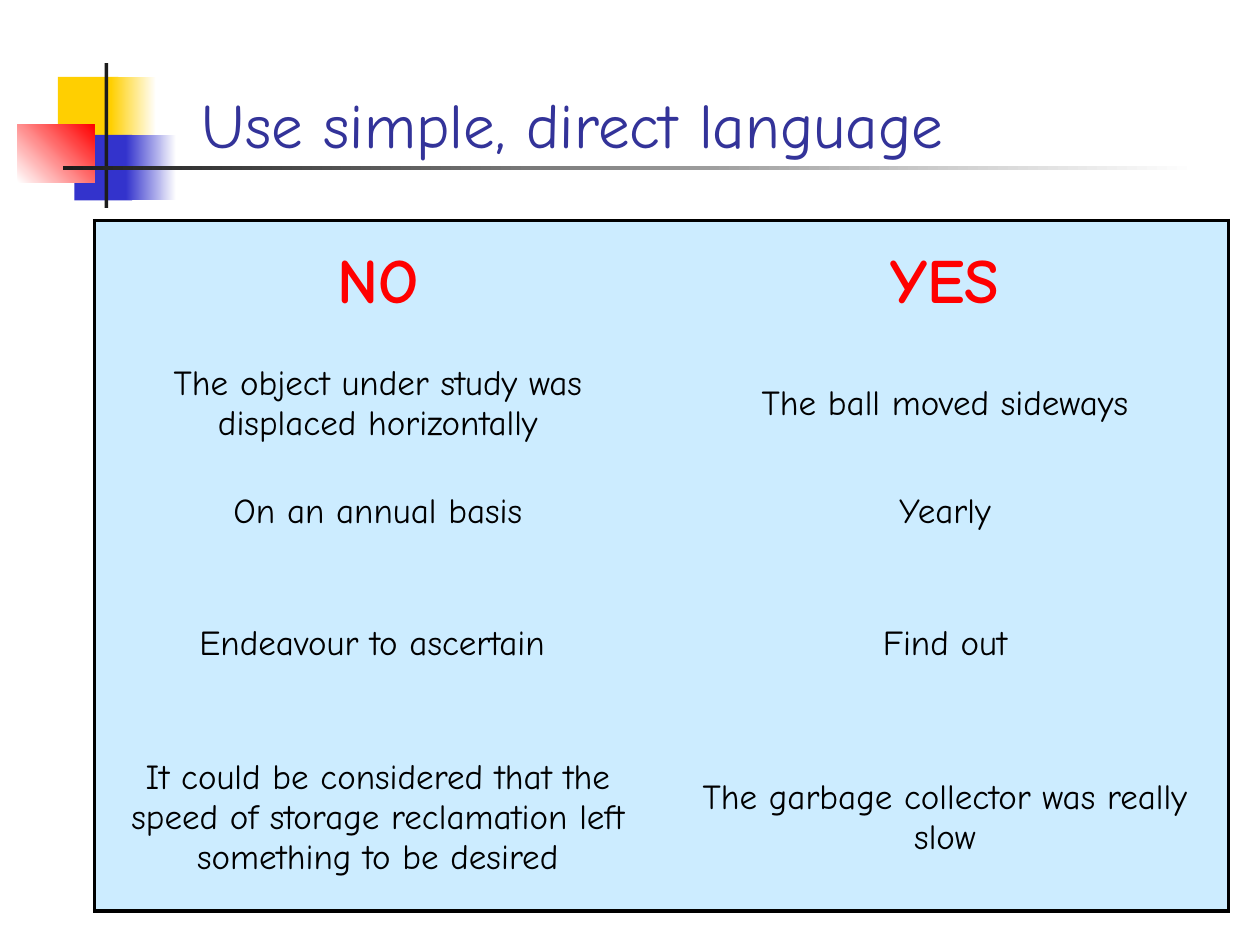
"""Builds a slide that contrasts wordy phrases with simple, direct ones."""
from dataclasses import dataclass
from typing import Optional

from lxml import etree
from pptx import Presentation
from pptx import util as u
from pptx.dml.color import RGBColor
from pptx.enum import shapes, text
from pptx.oxml import ns

EMU_PER_PX = 9144
NO_STYLE = "{2D5ABB26-0587-4C30-8999-92F81FD0307C}"


@dataclass(frozen=True)
class Theme:
    font: str = "Comic Neue"
    title: str = "333399"
    header: str = "FF0000"
    body: str = "000000"
    cell: str = "CCECFF"
    border: str = "000000"
    yellow: str = "FFCF01"
    blue: str = "3333CC"
    red: str = "FF0000"
    dark: str = "1C1C1C"
    white: str = "FFFFFF"
    large: int = 36
    small: int = 20
    border_pt: float = 2.25


@dataclass(frozen=True)
class Block:
    left: int
    top: int
    width: int
    height: int
    color: str
    fade_to: Optional[str] = None
    angle: int = 0


THEME = Theme()

BLOCKS = [
    Block(46, 61, 48, 52, THEME.yellow),
    Block(88, 61, 36, 52, THEME.yellow, THEME.white),
    Block(59, 107, 46, 52, THEME.blue),
    Block(100, 107, 40, 52, THEME.blue, THEME.white),
    Block(14, 99, 61, 46, THEME.white, THEME.red, 45),
    Block(83, 50, 3, 115, THEME.dark),
    Block(50, 132, 900, 3, THEME.dark, THEME.white),
]

PHRASES = [
    ("NO", "YES"),
    ("The object under study was displaced horizontally", "The ball moved sideways"),
    ("On an annual basis", "Yearly"),
    ("Endeavour to ascertain ", "Find out"),
    ("It could be considered that the speed of storage reclamation left "
     "something to be desired", "The garbage collector was really slow"),
]
ROW_HEIGHTS = [100, 92, 79, 130, 147]
COLUMN_WIDTH = 450


def px(n: int) -> u.Emu:
    """Turn layout pixels into EMU."""
    return u.Emu(n * EMU_PER_PX)


def rgb(color: str) -> RGBColor:
    """Turn a hex string into a colour."""
    return RGBColor.from_string(color)


def style_run(r, size: int, color: str, bold: bool = False) -> None:
    """Apply the theme font with a size, colour and weight."""
    r.font.name = THEME.font
    r.font.size = u.Pt(size)
    r.font.bold = bold
    r.font.color.rgb = rgb(color)


def add_block(slide, block: Block) -> None:
    """Draw one plain or fading rectangle of the title ornament."""
    sp = slide.shapes.add_shape(
        shapes.MSO_SHAPE.RECTANGLE, px(block.left), px(block.top),
        px(block.width), px(block.height))
    sp.shadow.inherit = False
    sp.line.fill.background()
    if block.fade_to is None:
        sp.fill.solid()
        sp.fill.fore_color.rgb = rgb(block.color)
        return
    sp.fill.gradient()
    sp.fill.gradient_angle = block.angle
    for stop, color in zip(sp.fill.gradient_stops, (block.color, block.fade_to)):
        stop.color.rgb = rgb(color)


def set_title(slide, title: str) -> None:
    """Place and format the title placeholder."""
    sp = slide.shapes.title
    sp.left, sp.top, sp.width, sp.height = px(150), px(8), px(852), px(125)
    tf = sp.text_frame
    tf.text = title
    tf.word_wrap = True
    tf.auto_size = text.MSO_AUTO_SIZE.NONE
    tf.vertical_anchor = text.MSO_ANCHOR.BOTTOM
    p = tf.paragraphs[0]
    p.alignment = text.PP_ALIGN.LEFT
    style_run(p.runs[0], THEME.large, THEME.title)


def add_border(cell, side: str) -> None:
    """Draw a border on one side (L, R, T or B) of a cell."""
    tc_pr = cell._tc.get_or_add_tcPr()
    ln = etree.SubElement(tc_pr, ns.qn(f"a:ln{side}"), w=str(u.Pt(THEME.border_pt)))
    fill = etree.SubElement(ln, ns.qn("a:solidFill"))
    etree.SubElement(fill, ns.qn("a:srgbClr"), val=THEME.border)


def fill_cell(cell, phrase: str, header: bool, sides: str) -> None:
    """Write a phrase into a cell and format the cell."""
    for side in sides:
        add_border(cell, side)
    cell.fill.solid()
    cell.fill.fore_color.rgb = rgb(THEME.cell)
    cell.vertical_anchor = text.MSO_ANCHOR.MIDDLE
    cell.text_frame.text = phrase
    p = cell.text_frame.paragraphs[0]
    p.alignment = text.PP_ALIGN.CENTER
    before = etree.SubElement(p._p.get_or_add_pPr(), ns.qn("a:spcBef"))
    etree.SubElement(before, ns.qn("a:spcPct"), val="20000")
    size, color = (THEME.large, THEME.header) if header else (THEME.small, THEME.body)
    style_run(p.runs[0], size, color, header)


def add_phrase_table(slide) -> None:
    """Add the two-column table of phrases with an outer frame."""
    rows, cols = len(PHRASES), len(PHRASES[0])
    frame = slide.shapes.add_table(
        rows, cols, px(75), px(175), px(cols * COLUMN_WIDTH), px(sum(ROW_HEIGHTS)))
    table = frame.table
    table.first_row = table.horz_banding = False
    table._tbl.tblPr.find(ns.qn("a:tableStyleId")).text = NO_STYLE
    for column in table.columns:
        column.width = px(COLUMN_WIDTH)
    for i, (row, height, phrases) in enumerate(zip(table.rows, ROW_HEIGHTS, PHRASES)):
        row.height = px(height)
        for j, phrase in enumerate(phrases):
            edges = {"L": j == 0, "R": j == cols - 1, "T": i == 0, "B": i == rows - 1}
            sides = "".join(side for side, outer in edges.items() if outer)
            fill_cell(table.cell(i, j), phrase, i == 0, sides)


def main() -> None:
    """Build and save the slide."""
    prs = Presentation()
    prs.slide_width, prs.slide_height = px(1000), px(750)
    slide = prs.slides.add_slide(prs.slide_layouts[5])
    for block in BLOCKS:
        add_block(slide, block)
    set_title(slide, "Use simple, direct language")
    add_phrase_table(slide)
    prs.save("out.pptx")


if __name__ == "__main__":
    main()
